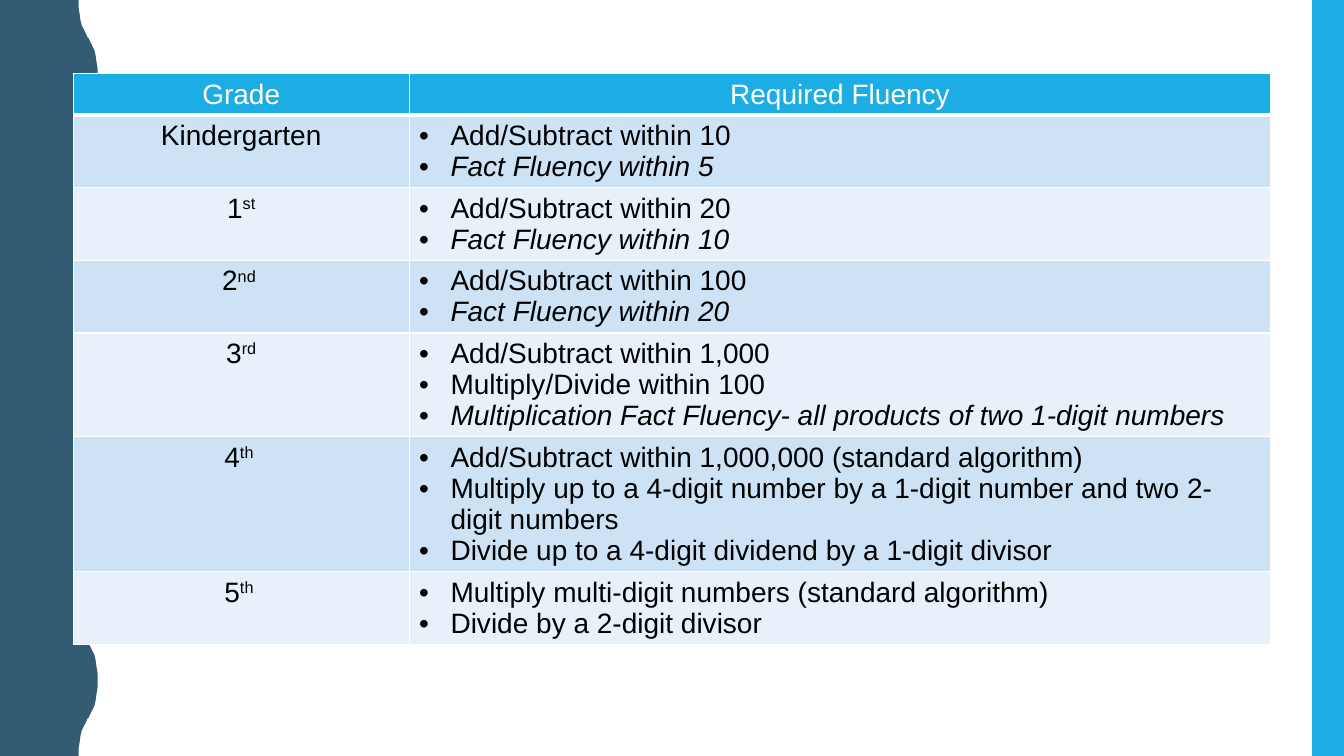
from lxml.etree import SubElement
from pptx import Presentation
from pptx.dml.color import RGBColor
from pptx.enum.shapes import MSO_SHAPE as Shape
from pptx.enum.text import PP_ALIGN as Align
from pptx.oxml import parse_xml
from pptx.oxml.ns import nsdecls, qn
from pptx.util import Cm, Pt

NAVY = RGBColor(0x33, 0x5B, 0x74)
BLUE = RGBColor(0x1C, 0xAD, 0xE4)
BAND_DARK = RGBColor(0xCD, 0xE3, 0xF5)
BAND_LIGHT = RGBColor(0xE8, 0xF1, 0xFA)
WHITE = RGBColor(0xFF, 0xFF, 0xFF)
BLACK = RGBColor(0, 0, 0)

PAGE_WIDTH, PAGE_HEIGHT = 33.87, 19.05
WAVE_COUNT = 5
WAVE_LENGTH = PAGE_HEIGHT / WAVE_COUNT
WAVE_WIDTHS = 4.44
QUARTER_WAVE = [(1.98, 0), (1.98, 0.18), (2.01, 0.36), (2.03, 0.51),
                (2.06, 0.64), (2.11, 0.74), (2.16, 0.84), (2.21, 0.95)]

HEADINGS = ["Grade", "Required Fluency"]
COLUMN_WIDTHS = [8.46, 21.72]
HEADER_HEIGHT, LINE_HEIGHT, CELL_PADDING = 1.03, 0.78, 0.26
GRADES = [
    ("Kindergarten", "", 2, ["Add/Subtract within 10"], "Fact Fluency within 5"),
    ("1", "st", 2, ["Add/Subtract within 20"], "Fact Fluency within 10"),
    ("2", "nd ", 2, ["Add/Subtract within 100"], "Fact Fluency within 20"),
    ("3", "rd", 3, ["Add/Subtract within 1,000", "Multiply/Divide within 100"],
     "Multiplication Fact Fluency- all products of two 1-digit numbers"),
    ("4", "th ", 4, ["Add/Subtract within 1,000,000 (standard algorithm)",
                     "Multiply up to a 4-digit number by a 1-digit number and two 2-digit numbers",
                     "Divide up to a 4-digit dividend by a 1-digit divisor"], ""),
    ("5", "th ", 2, ["Multiply multi-digit numbers (standard algorithm)",
                     "Divide by a 2-digit divisor"], ""),
]


def paint(shape, color):
    """Give a shape a plain fill with no line or shadow."""
    shape.shadow.inherit = False
    shape.fill.solid()
    shape.fill.fore_color.rgb = color
    shape.line.fill.background()


def add_wavy_edge(page):
    """Draw the left band, whose right side repeats one wave."""
    half = WAVE_LENGTH / 2
    rise = QUARTER_WAVE + [(WAVE_WIDTHS - x, half - y) for x, y in reversed(QUARTER_WAVE)]
    wave = rise + [(x, WAVE_LENGTH - y) for x, y in reversed(rise)]
    outline = [(x, y + i * WAVE_LENGTH) for i in range(WAVE_COUNT) for x, y in wave]
    outline.append((0, PAGE_HEIGHT))
    builder = page.shapes.build_freeform(0, 0)
    builder.add_line_segments([(Cm(x), Cm(y)) for x, y in outline])
    paint(builder.convert_to_shape(), NAVY)


def add_right_bar(page):
    """Draw the bar along the right side."""
    bar = page.shapes.add_shape(Shape.RECTANGLE, Cm(33.07), 0, Cm(0.8), Cm(PAGE_HEIGHT))
    paint(bar, BLUE)


def style_cell(cell, color, bottom=1):
    """Fill a cell and give it white borders."""
    cell.fill.solid()
    cell.fill.fore_color.rgb = color
    widths = {"lnL": 1, "lnR": 1, "lnT": 1, "lnB": bottom}
    for index, (side, width) in enumerate(widths.items()):
        border = parse_xml(
            f'<a:{side} {nsdecls("a")} w="{Pt(width)}"><a:solidFill>'
            f'<a:srgbClr val="{WHITE}"/></a:solidFill></a:{side}>')
        cell._tc.get_or_add_tcPr().insert(index, border)


def style_para(para, color, align=Align.LEFT, italic=False):
    """Set the font and alignment of a paragraph."""
    para.alignment = align
    font = para.font
    font.name, font.size, font.bold, font.italic = "Arial", Pt(20), False, italic
    font.color.rgb = color


def add_bullet(para, text, italic):
    """Write one bulleted line with a hanging indent."""
    para.text = text
    properties = para._p.get_or_add_pPr()
    properties.set("marL", str(Cm(0.79)))
    properties.set("indent", str(-Cm(0.79)))
    SubElement(properties, qn("a:buFont"), typeface="Arial")
    SubElement(properties, qn("a:buChar"), char="•")
    style_para(para, BLACK, italic=italic)


def fill_grade(cell, grade, suffix):
    """Write a grade with its raised suffix."""
    para = cell.text_frame.paragraphs[0]
    para.add_run().text = grade
    if suffix:
        span = para.add_run()
        span.text = suffix
        span._r.get_or_add_rPr().set("baseline", "30000")
    style_para(para, BLACK, Align.CENTER)


def fill_skills(cell, skills, fact_skill):
    """List the skills of a grade, with the fact fluency in italics."""
    frame = cell.text_frame
    lines = [(skill, False) for skill in skills]
    if fact_skill:
        lines.append((fact_skill, True))
    for index, (text, italic) in enumerate(lines):
        para = frame.add_paragraph() if index else frame.paragraphs[0]
        add_bullet(para, text, italic)


def add_fluency_table(page):
    """Build the table of required fluency by grade."""
    heights = [HEADER_HEIGHT] + [n * LINE_HEIGHT + CELL_PADDING for _, _, n, _, _ in GRADES]
    table = page.shapes.add_table(
        len(heights), len(HEADINGS), Cm(1.85), Cm(1.86),
        Cm(sum(COLUMN_WIDTHS)), Cm(sum(heights))).table
    for column, width in zip(table.columns, COLUMN_WIDTHS):
        column.width = Cm(width)
    for row, height in zip(table.rows, heights):
        row.height = Cm(height)
    for cell, heading in zip(table.rows[0].cells, HEADINGS):
        style_cell(cell, BLUE, bottom=3)
        para = cell.text_frame.paragraphs[0]
        para.text = heading
        style_para(para, WHITE, Align.CENTER)
    for index, (grade, suffix, _, skills, fact_skill) in enumerate(GRADES):
        grade_cell, skills_cell = table.rows[index + 1].cells
        for cell in (grade_cell, skills_cell):
            style_cell(cell, BAND_LIGHT if index % 2 else BAND_DARK)
        fill_grade(grade_cell, grade, suffix)
        fill_skills(skills_cell, skills, fact_skill)


def main():
    """Build the slide and save the deck."""
    deck = Presentation()
    deck.slide_width, deck.slide_height = Cm(PAGE_WIDTH), Cm(PAGE_HEIGHT)
    page = deck.slides.add_slide(deck.slide_layouts[6])
    add_wavy_edge(page)
    add_right_bar(page)
    add_fluency_table(page)
    deck.save("out.pptx")


if __name__ == "__main__":
    main()
